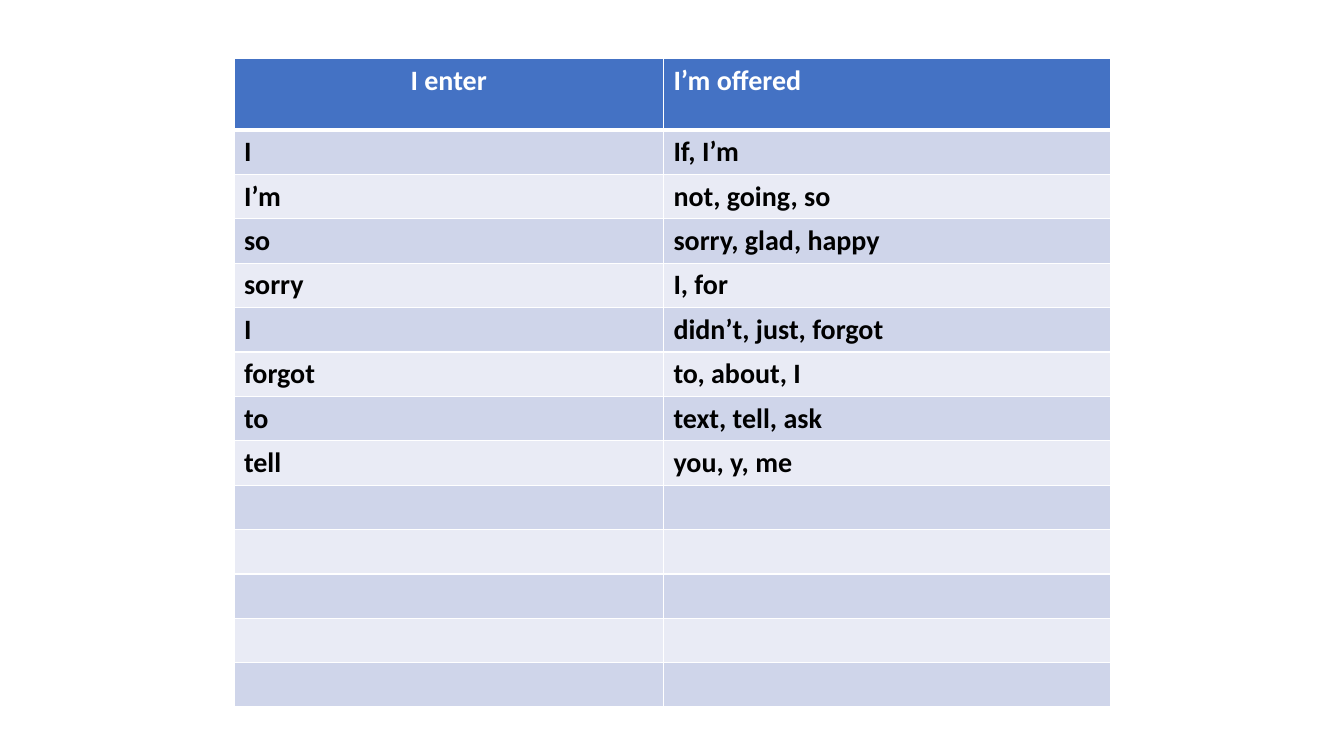
from pptx import Presentation
from pptx.dml.color import RGBColor
from pptx.enum.text import PP_ALIGN
from pptx.oxml import parse_xml
from pptx.oxml.ns import nsdecls
from pptx.util import Emu, Pt

PX = 9144
THEME = {
    "font": "Calibri",
    "size": 20,
    "head": "4472C4",
    "bands": ["CFD5EA", "E9EBF5"],
    "light": "FFFFFF",
    "dark": "000000",
    "thin": 1,
    "thick": 3,
}
WORDS = [
    ("I enter", "I’m offered"),
    ("I", "If, I’m"),
    ("I’m", "not, going, so"),
    ("so", "sorry, glad, happy"),
    ("sorry", "I, for"),
    ("I", "didn’t, just, forgot"),
    ("forgot", "to, about, I"),
    ("to", "text, tell, ask"),
    ("tell", "you, y, me"),
]
SPARE = 5
COLS = [426, 444]
HEAD, BODY = 71, 44


def px(n):
    return Emu(n * PX)


def edge(cell, side, width):
    return parse_xml(
        f'<a:ln{side} {nsdecls("a")} w="{Pt(width)}"><a:solidFill>'
        f'<a:srgbClr val="{THEME["light"]}"/></a:solidFill></a:ln{side}>'
    )


deck = Presentation()
deck.slide_width, deck.slide_height = px(1333), px(750)
slide = deck.slides.add_slide(deck.slide_layouts[6])

rows = WORDS + [("", "")] * SPARE
high = HEAD + BODY * (len(rows) - 1)
table = slide.shapes.add_table(
    len(rows), len(COLS), px(232), px(58), px(sum(COLS)), px(high)
).table
for col, width in zip(table.columns, COLS):
    col.width = px(width)

for r, texts in enumerate(rows):
    first = r == 0
    table.rows[r].height = px(HEAD if first else BODY)
    fill = THEME["head"] if first else THEME["bands"][(r - 1) % 2]
    ink = THEME["light"] if first else THEME["dark"]
    sides = {
        "L": THEME["thin"],
        "R": THEME["thin"],
        "T": THEME["thick"] if r == 1 else THEME["thin"],
        "B": THEME["thick"] if first else THEME["thin"],
    }
    for c, text in enumerate(texts):
        cell = table.cell(r, c)
        cell.fill.solid()
        cell.fill.fore_color.rgb = RGBColor.from_string(fill)
        props = cell._tc.get_or_add_tcPr()
        for i, (side, width) in enumerate(sides.items()):
            props.insert(i, edge(cell, side, width))
        if not text:
            continue
        cell.text_frame.text = text
        para = cell.text_frame.paragraphs[0]
        para.alignment = PP_ALIGN.CENTER if first and c == 0 else PP_ALIGN.LEFT
        font = para.runs[0].font
        font.name, font.size, font.bold = THEME["font"], Pt(THEME["size"]), True
        font.color.rgb = RGBColor.from_string(ink)

deck.save("out.pptx")
